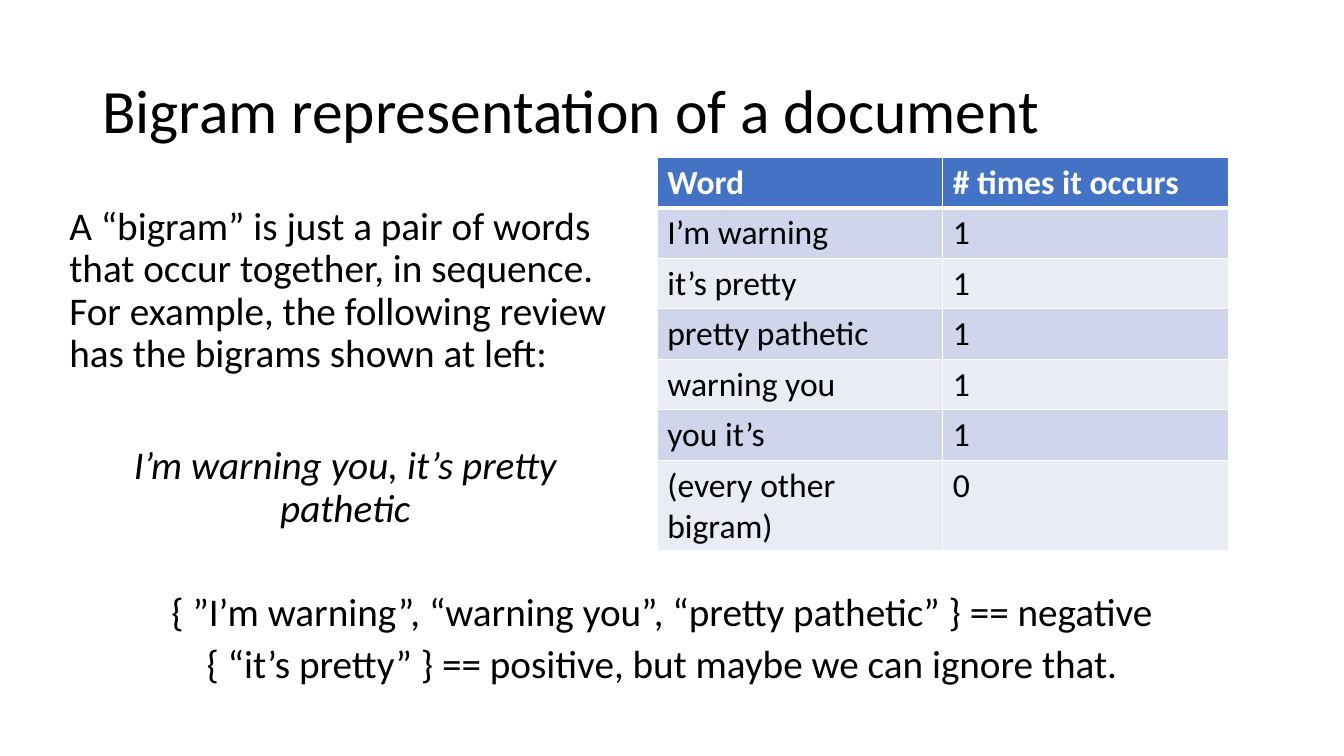
import pptx
import pptx.dml.color
import pptx.enum.text
import pptx.oxml
import pptx.oxml.ns
import pptx.util
from dataclasses import dataclass

Pt = pptx.util.Pt
RGBColor = pptx.dml.color.RGBColor
CENTER = pptx.enum.text.PP_ALIGN.CENTER
ANCHOR = pptx.enum.text.MSO_ANCHOR


@dataclass(frozen=True)
class Theme:
    font: str = "Calibri"
    title_size: int = 44
    body_size: int = 28
    table_size: int = 24
    text: str = "000000"
    white: str = "FFFFFF"
    header: str = "4472C4"
    bands: tuple = ("CFD5EA", "E9EBF5")


theme = Theme()


def style_font(font, size, color, bold=False, italic=False):
    font.name = theme.font
    font.size = Pt(size)
    font.bold = bold
    font.italic = italic
    font.color.rgb = RGBColor.from_string(color)


def add_text(slide, box, lines, size, line_spacing, anchor=ANCHOR.TOP):
    """Each line is (text, alignment, space before in points, italic)."""
    frame = slide.shapes.add_textbox(*map(Pt, box)).text_frame
    frame.word_wrap = True
    frame.vertical_anchor = anchor
    for index, (text, alignment, space_before, italic) in enumerate(lines):
        paragraph = frame.add_paragraph() if index else frame.paragraphs[0]
        paragraph.text = text
        paragraph.alignment = alignment
        paragraph.line_spacing = line_spacing
        paragraph.space_before = Pt(space_before)
        style_font(paragraph.font, size, theme.text, italic=italic)


presentation = pptx.Presentation()
presentation.slide_width = Pt(960)
presentation.slide_height = Pt(540)
slide = presentation.slides.add_slide(presentation.slide_layouts[6])

# Title
add_text(slide, (66, 28.75, 828, 104.4),
         [("Bigram representation of a document", None, 0, False)],
         theme.title_size, 0.9, ANCHOR.MIDDLE)

# Explanation and sample review
add_text(slide, (42.5, 144, 408.2, 342.7), [
    ("A “bigram” is just a pair of words that occur together, in sequence. "
     "For example, the following review has the bigrams shown at left:", None, 10, False),
    ("I’m warning you, it’s pretty pathetic", CENTER, 50, True),
], theme.body_size, 0.9)

# Bigram counts
counts = [
    ("Word", "# times it occurs"),
    ("I’m warning", "1"),
    ("it’s pretty", "1"),
    ("pretty pathetic", "1"),
    ("warning you", "1"),
    ("you it’s", "1"),
    ("(every other bigram)", "0"),
]
table_height = 280.8
table_frame = slide.shapes.add_table(
    len(counts), 2, Pt(469.5), Pt(112.5), Pt(408), Pt(table_height))
table = table_frame.table
for row_index, values in enumerate(counts):
    table.rows[row_index].height = Pt(29.5)  # rows grow to fit their text
    is_header = row_index == 0
    fill_color = theme.header if is_header else theme.bands[(row_index - 1) % 2]
    text_color = theme.white if is_header else theme.text
    for column_index, value in enumerate(values):
        cell = table.cell(row_index, column_index)
        cell.text = value
        style_font(cell.text_frame.paragraphs[0].font, theme.table_size,
                   text_color, bold=is_header)
        # White rules, thicker under the header
        for side in ("L", "R", "T", "B"):
            thick = (row_index, side) in ((0, "B"), (1, "T"))
            cell._tc.get_or_add_tcPr().append(pptx.oxml.parse_xml(
                f'<a:ln{side} {pptx.oxml.ns.nsdecls("a")} w="{Pt(3 if thick else 1)}">'
                f'<a:solidFill><a:srgbClr val="{theme.white}"/></a:solidFill>'
                f'</a:ln{side}>'))
        cell.fill.solid()
        cell.fill.fore_color.rgb = RGBColor.from_string(fill_color)
table_frame.height = Pt(table_height)

# Conclusions
add_text(slide, (73.5, 422.6, 798.5, 77), [
    ("{ ”I’m warning”, “warning you”, “pretty pathetic” } == negative", CENTER, 10, False),
    ("{ “it’s pretty” } == positive, but maybe we can ignore that.", CENTER, 10, False),
], theme.body_size, 0.8)

presentation.save("out.pptx")
